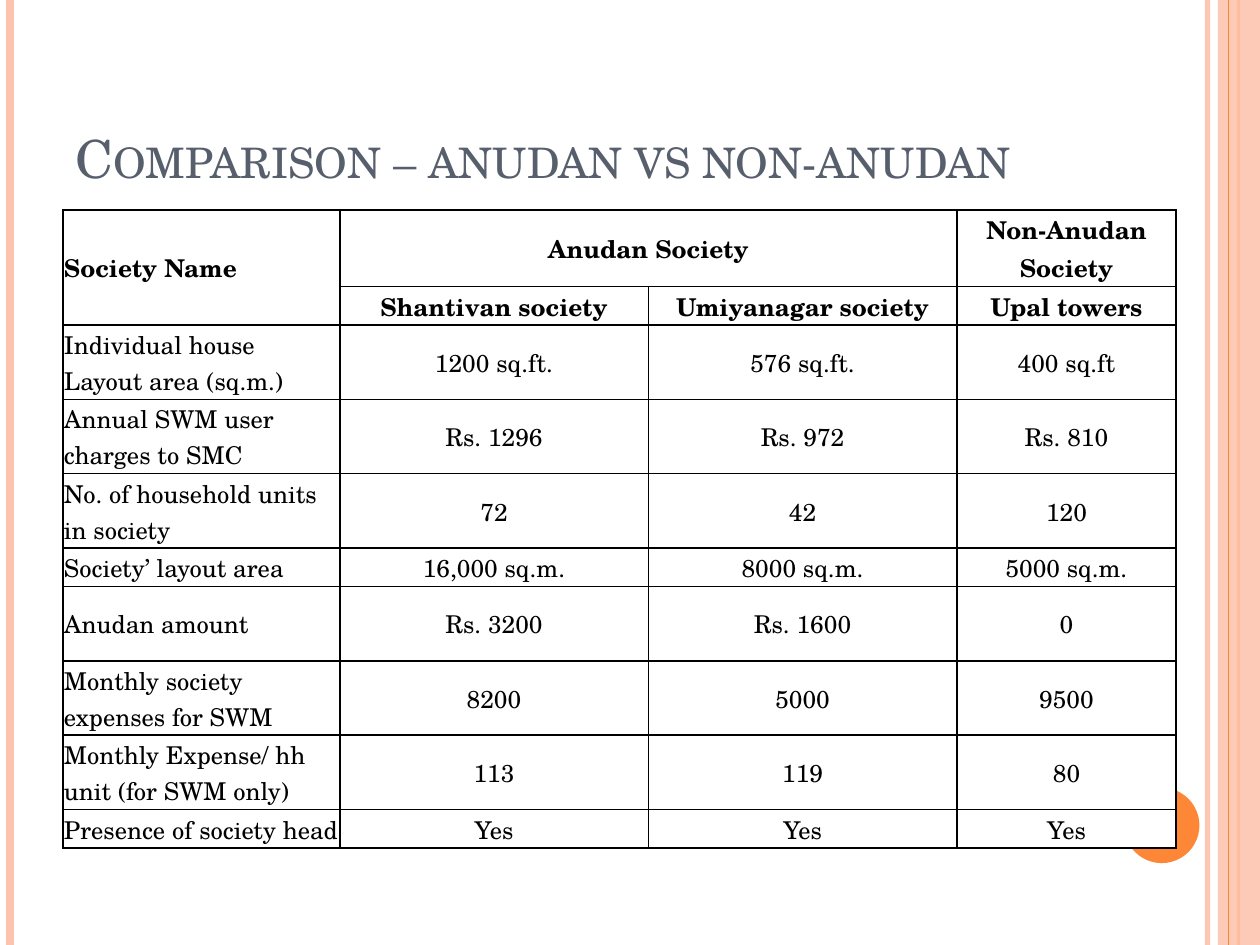
from lxml import etree
from pptx import Presentation
from pptx import util as u
from pptx.dml import color
from pptx.enum import shapes, text
from pptx.oxml import ns

Cm, Pt = u.Cm, u.Pt
FONT = "TeX Gyre Schola"
HUES = {"pink": "FEC3AE", "orange": "FE8637", "slate": "575F6D",
        "black": "000000", "white": "FFFFFF"}


def paint(fill, hue, alpha=None):
    fill.solid()
    fill.fore_color.rgb = color.RGBColor.from_string(HUES[hue])
    if alpha:
        tone = next(fill._xPr.iter(ns.qn("a:srgbClr")))
        etree.SubElement(tone, ns.qn("a:alpha"), val=str(alpha * 1000))


def write(frame, words, size, hue, bold=False):
    run = frame.paragraphs[0].add_run()
    run.text = words
    run.font.name, run.font.size, run.font.bold = FONT, Pt(size), bold
    paint(run.font.fill, hue)
    return run


deck = Presentation()
deck.slide_width, deck.slide_height = Cm(25.4), Cm(19.05)
slide = deck.slides.add_slide(deck.slide_layouts[6])
parts = slide.shapes

# Side bands: stripes, panel and disc
band = [("line", 24.34, "pink", 3, 93), ("line", 0.21, "pink", 4.5, None),
        ("line", 24.97, "orange", 1.5, None), ("panel", 24.55, "pink", 0, 87),
        ("line", 24.77, "orange", 0.75, None), ("disc", 22.66, "orange", 0, None)]
for kind, left, hue, width, alpha in band:
    if kind == "line":
        line = parts.add_connector(shapes.MSO_CONNECTOR.STRAIGHT,
                                   Cm(left), Cm(0), Cm(left), Cm(19.05))
        line.line.width = Pt(width)
        paint(line.line.fill, hue, alpha)
        etree.SubElement(line._element.spPr, ns.qn("a:effectLst"))
        continue
    if kind == "panel":
        shape = parts.add_shape(shapes.MSO_SHAPE.RECTANGLE,
                                Cm(left), Cm(0), Cm(0.85), Cm(19.05))
    else:
        shape = parts.add_shape(shapes.MSO_SHAPE.OVAL,
                                Cm(left), Cm(15.88), Cm(1.52), Cm(1.52))
    shape.shadow.inherit = False
    paint(shape.fill, hue, alpha)
    shape.line.fill.background()

# Title in small capitals
title = parts.add_textbox(Cm(1.27), Cm(0.76), Cm(20.75), Cm(3.18)).text_frame
title.word_wrap = True
title.vertical_anchor = text.MSO_ANCHOR.BOTTOM
run = write(title, "Comparison – anudan vs non-anudan", 30, "slate")
run.font._element.set("cap", "small")

# Comparison table
rows = [
    ["Society Name", "Anudan Society", "", "Non-Anudan Society"],
    ["", "Shantivan society", "Umiyanagar society", "Upal towers"],
    ["Individual house Layout area (sq.m.)", "1200 sq.ft.", "576 sq.ft.", "400 sq.ft"],
    ["Annual SWM user charges to SMC", "Rs. 1296", "Rs. 972", "Rs. 810"],
    ["No. of household units in society", "72", "42", "120"],
    ["Society’ layout area", "16,000 sq.m.", "8000 sq.m.", "5000 sq.m."],
    ["Anudan amount", "Rs. 3200", "Rs. 1600", "0"],
    ["Monthly society expenses for SWM", "8200", "5000", "9500"],
    ["Monthly Expense/ hh unit (for SWM only)", "113", "119", "80"],
    ["Presence of society head", "Yes", "Yes", "Yes"],
]
wide = [5.58, 6.22, 6.22, 4.42]
short, tall = 0.77, 1.5
high = [1.55, short, tall, tall, tall, short, tall, tall, tall, short]

grid = parts.add_table(len(rows), len(wide), Cm(1.27), Cm(4.23),
                       Cm(sum(wide)), Cm(sum(high))).table
grid.first_row = grid.horz_banding = False
for col, width in zip(grid.columns, wide):
    col.width = Cm(width)
for row, height in zip(grid.rows, high):
    row.height = Cm(height)
grid.cell(0, 0).merge(grid.cell(1, 0))
grid.cell(0, 1).merge(grid.cell(0, 2))

for r, row in enumerate(rows):
    for c, words in enumerate(row):
        cell = grid.cell(r, c)
        cell.margin_left = cell.margin_right = cell.margin_top = Cm(0.02)
        cell.margin_bottom = Cm(0)
        cell.vertical_anchor = text.MSO_ANCHOR.MIDDLE
        # Borders come before the fill in the cell properties
        props = cell._tc.get_or_add_tcPr()
        for side in ("lnL", "lnR", "lnT", "lnB"):
            edge = etree.SubElement(props, ns.qn("a:" + side), w=str(Pt(1)))
            ink = etree.SubElement(edge, ns.qn("a:solidFill"))
            etree.SubElement(ink, ns.qn("a:srgbClr"), val=HUES["black"])
        paint(cell.fill, "white")
        if words:
            write(cell.text_frame, words, 14, "black", bold=r < 2)
            if c:
                cell.text_frame.paragraphs[0].alignment = text.PP_ALIGN.CENTER

deck.save("out.pptx")
